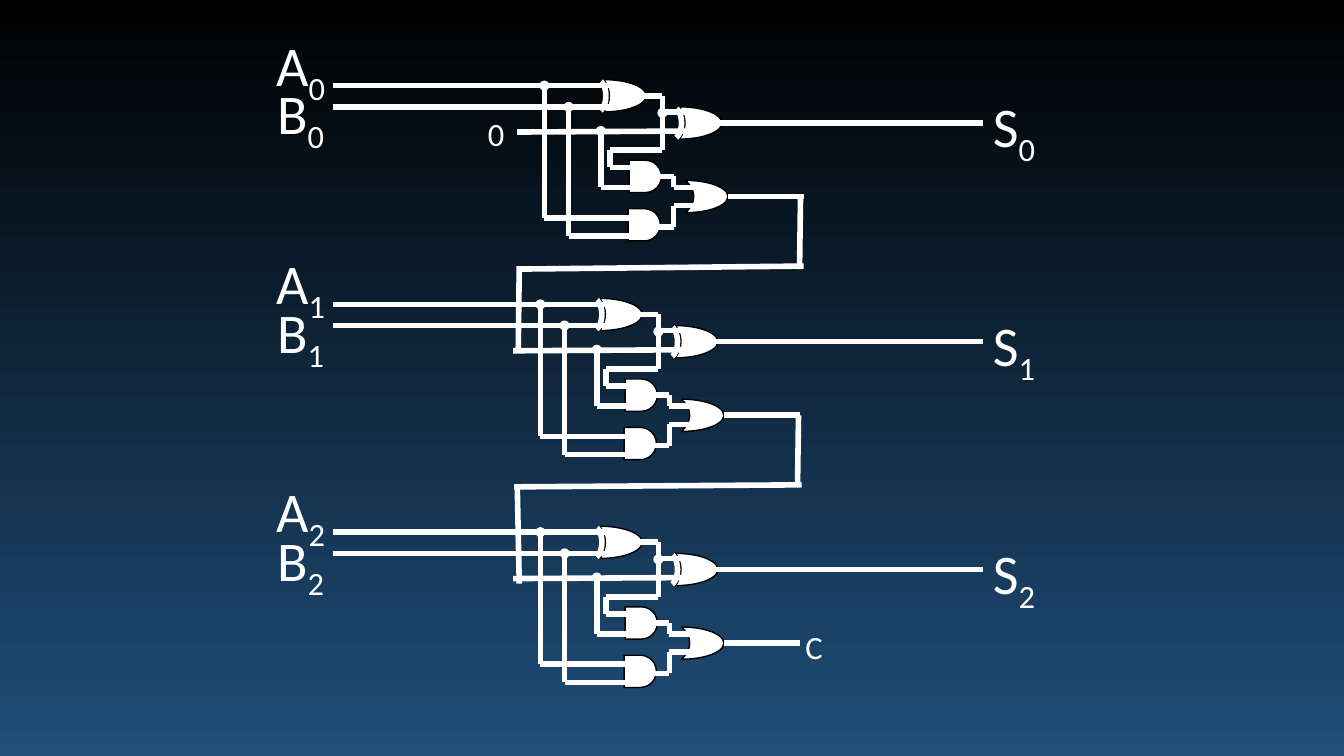
from itertools import pairwise
from pptx import Presentation, util as u
from pptx.dml.color import RGBColor
from pptx.enum import shapes, text
from pptx.oxml import parse_xml
from pptx.oxml.ns import nsdecls

WHITE = RGBColor(0xFF, 0xFF, 0xFF)
BLACK = RGBColor(0x00, 0x00, 0x00)
NAVY = RGBColor(0x1F, 0x4E, 0x79)
KIND = shapes.MSO_SHAPE

# Content, in inches: one full adder, placed by the offset of each stage
STAGES = [(0, 0), (-0.04, 2.17), (-0.04, 4.43)]
INPUT_X, OUTPUT_X = 3.3, 9.75
GATE_W, GATE_H, ARC_W, DOT = 0.42, 0.32, 0.18, 0.1
XOR_GATES = [(5.99, 0.79), (6.74, 1.06)]
OR_GATE = (6.8, 1.79)
AND_GATES = [(6.24, 1.59), (6.23, 2.07)]
DOTS = [(6.57, 1.12), (5.96, 1.3), (5.4, 0.85), (5.64, 1.06)]
INPUT_WIRES = [(6.05, 0.85), (6.05, 1.06)]
SUM_WIRE = (7.09, 1.22)
WIRES = [
    [(5.13, 1.31), (6.87, 1.3)],
    [(6.35, 0.95), (6.57, 0.95), (6.57, 1.49), (6.05, 1.49), (6.05, 1.66), (6.27, 1.66)],
    [(6.56, 1.11), (6.83, 1.11)],
    [(5.96, 1.26), (5.96, 1.86), (6.4, 1.86)],
    [(5.64, 1.04), (5.64, 2.34), (6.39, 2.34)],
    [(5.4, 0.84), (5.4, 2.16), (6.29, 2.16)],
    [(6.46, 1.75), (6.68, 1.75), (6.68, 1.86), (6.91, 1.86)],
    [(6.46, 2.25), (6.68, 2.25), (6.68, 2.04), (6.91, 2.04)],
    [(7.22, 1.95), (7.97, 1.95)],
]
CARRIES = [
    ((7.94, 1.95), (7.93, 2.67)), ((5.13, 2.67), (7.97, 2.64)),
    ((5.15, 2.64), (5.14, 3.5)), ((7.92, 4.12), (7.91, 4.83)),
    ((5.1, 4.83), (7.95, 4.81)), ((5.13, 4.81), (5.15, 5.79)),
]
# Letter, left, top in the first stage, width
STAGE_LABELS = [("A", 2.64, 0.25, 0.72), ("B", 2.65, 0.73, 0.7), ("S", 9.75, 0.86, 0.65)]
CARRY_LABELS = [("0", 4.74, 0.71, 0.39), ("C", 7.89, 5.8, 0.4)]


def add_shape(target, kind, x, y, w, h, fill=WHITE, line=None, width=1):
    sp = target.add_shape(kind, *map(u.Inches, (x, y, w, h)))
    sp.shadow.inherit = False
    if fill is None:
        sp.fill.background()
    else:
        sp.fill.solid()
        sp.fill.fore_color.rgb = fill
    if line is None:
        sp.line.fill.background()
    else:
        sp.line.color.rgb = line
        sp.line.width = u.Pt(width)
    return sp


def add_moon(target, x, y, adjust):
    sp = add_shape(target, KIND.MOON, x, y, GATE_W, GATE_H, line=BLACK)
    sp.adjustments[0] = adjust
    sp.rotation = 180


def add_wire(target, start, end):
    wire = target.add_connector(shapes.MSO_CONNECTOR.STRAIGHT,
                                *map(u.Inches, (*start, *end)))
    wire.line.color.rgb = WHITE
    wire.line.width = u.Pt(4)
    wire._element.spPr.append(parse_xml(f"<a:effectLst {nsdecls('a')}/>"))


def add_label(target, letter, subscript, x, y, w):
    tb = target.add_textbox(*map(u.Inches, (x, y, w, 0.77)))
    tf = tb.text_frame
    tf.word_wrap = False
    tf.auto_size = text.MSO_AUTO_SIZE.SHAPE_TO_FIT_TEXT
    p = tf.paragraphs[0]
    for part, baseline in ((letter, None), (subscript, "-25000")):
        if not part:
            continue
        r = p.add_run()
        r.text = part
        r.font.name, r.font.size = "Calibri", u.Pt(40)
        r.font.color.rgb = WHITE
        if baseline:
            r._r.get_or_add_rPr().set("baseline", baseline)


def add_adder(target, dx, dy):
    def shift(point):
        return point[0] + dx, point[1] + dy

    # Gates
    for x, y in map(shift, XOR_GATES):
        add_moon(target, x, y, 0.871)
        arc = add_shape(target, KIND.ARC, x - 0.16, y, ARC_W, GATE_H, None, WHITE, 4)
        arc.adjustments[0], arc.adjustments[1] = 171.697, 45.358
    add_moon(target, *shift(OR_GATE), 0.808)
    for x, y in map(shift, AND_GATES):
        add_shape(target, KIND.FLOWCHART_DELAY, x, y, GATE_H, GATE_H, line=BLACK)
    # Wires and junctions
    for x, y in map(shift, INPUT_WIRES):
        add_wire(target, (INPUT_X, y), (x, y))
    for wire in WIRES:
        for start, end in pairwise(map(shift, wire)):
            add_wire(target, start, end)
    x, y = shift(SUM_WIRE)
    add_wire(target, (x, y), (OUTPUT_X, y))
    for x, y in map(shift, DOTS):
        add_shape(target, KIND.OVAL, x - DOT / 2, y - DOT / 2, DOT, DOT)


def main():
    prs = Presentation()
    prs.slide_width, prs.slide_height = u.Inches(13.33), u.Inches(7.5)
    s = prs.slides.add_slide(prs.slide_layouts[6])

    # Background, dark at the top
    fill = s.background.fill
    fill.gradient()
    fill.gradient_angle = 270
    for stop, colour in zip(fill.gradient_stops, (BLACK, NAVY)):
        stop.color.rgb = colour

    # Adder stages with their labels
    for number, (dx, dy) in enumerate(STAGES):
        add_adder(s.shapes.add_group_shape().shapes, dx, dy)
        for letter, x, y, w in STAGE_LABELS:
            add_label(s.shapes, letter, str(number), x, y + dy, w)

    # Carry chain
    for start, end in CARRIES:
        add_wire(s.shapes, start, end)
    for label, x, y, w in CARRY_LABELS:
        add_label(s.shapes, "", label, x, y, w)

    prs.save("out.pptx")


if __name__ == "__main__":
    main()
